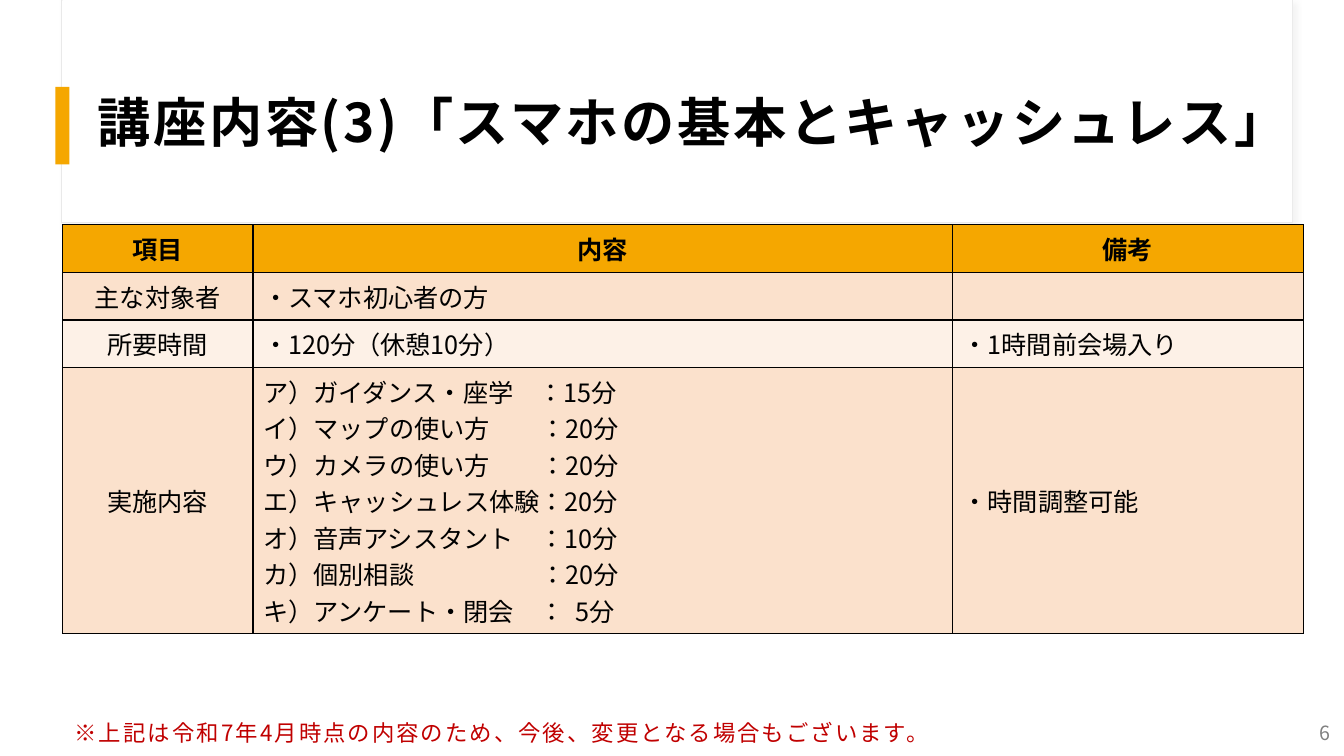
from lxml.etree import SubElement
from pptx import Presentation
from pptx.dml.color import RGBColor
from pptx.enum.shapes import MSO_SHAPE
from pptx.enum.text import MSO_ANCHOR, MSO_AUTO_SIZE, PP_ALIGN
from pptx.oxml.ns import qn
from pptx.util import Pt

HUES = {
    "white": "FFFFFF", "black": "000000", "gold": "F5A700", "peach": "FBE1CC",
    "cream": "FDF1E7", "edge": "E9E9E9", "shade": "D9D9D9", "red": "C00000",
    "grey": "808080",
}
FONT = "Noto Sans CJK JP"
INSET = (8.64, 8.64, 8.64, 7.2)


class Deck:
    def __init__(self, slide):
        self.slide = slide
        self.shapes = slide.shapes

    def hue(self, name):
        return RGBColor.from_string(HUES[name])

    def run(self, para, text, size, color="black", bold=False, gap=0):
        run = para.add_run()
        run.text = text
        font = run.font
        font.size, font.bold, font.name = Pt(size), bold, FONT
        font.color.rgb = self.hue(color)
        props = run._r.get_or_add_rPr()
        props.set("lang", "ja-JP")
        if gap:
            props.set("spc", str(round(gap * 100)))
        SubElement(props, qn("a:ea"), typeface=FONT)

    def rect(self, box, fill, line=None, shade=False):
        shape = self.shapes.add_shape(MSO_SHAPE.RECTANGLE, *map(Pt, box))
        shape.shadow.inherit = False
        shape.fill.solid()
        shape.fill.fore_color.rgb = self.hue(fill)
        if line:
            shape.line.color.rgb = self.hue(line)
            shape.line.width = Pt(0.75)
        else:
            shape.line.fill.background()
        if shade:
            glow = shape._element.spPr.find(qn("a:effectLst"))
            drop = SubElement(glow, qn("a:outerShdw"), blurRad=str(Pt(4)),
                              dist=str(Pt(3)), dir="2700000")
            tint = SubElement(drop, qn("a:srgbClr"), val=HUES["shade"])
            SubElement(tint, qn("a:alpha"), val="30000")

    def frame(self, shape, box, inset, anchor, align):
        shape.left, shape.top, shape.width, shape.height = map(Pt, box)
        frame = shape.text_frame
        frame.word_wrap = True
        frame.auto_size = MSO_AUTO_SIZE.NONE
        frame.vertical_anchor = anchor
        (frame.margin_left, frame.margin_top,
         frame.margin_right, frame.margin_bottom) = map(Pt, inset)
        para = frame.paragraphs[0]
        para.alignment = align
        return para

    def title(self, box, text):
        shape = self.shapes.title
        self.shapes._spTree.append(shape._element)
        para = self.frame(shape, box, INSET, MSO_ANCHOR.MIDDLE, PP_ALIGN.LEFT)
        para.line_spacing = 1.05
        self.run(para, text, 38, bold=True, gap=1.8)

    def body(self, box, text):
        shape = self.slide.placeholders[1]
        self.shapes._spTree.append(shape._element)
        para = self.frame(shape, box, INSET, MSO_ANCHOR.BOTTOM, PP_ALIGN.LEFT)
        para.space_before = Pt(0)
        props = para._p.get_or_add_pPr()
        props.set("marL", "0")
        props.set("indent", "0")
        SubElement(props, qn("a:buNone"))
        self.run(para, text, 16, "red", gap=1.5)

    def label(self, box, text):
        shape = self.shapes.add_textbox(*map(Pt, box))
        para = self.frame(shape, box, (0, 0, 0, 0), MSO_ANCHOR.MIDDLE, PP_ALIGN.RIGHT)
        self.run(para, text, 14, "grey")

    def cell(self, cell, lines, fill, head, mid):
        props = cell._tc.get_or_add_tcPr()
        for side in ("lnL", "lnR", "lnT", "lnB"):
            line = SubElement(props, qn("a:" + side), w=str(Pt(1)))
            solid = SubElement(line, qn("a:solidFill"))
            SubElement(solid, qn("a:srgbClr"), val=HUES["black"])
        cell.fill.solid()
        cell.fill.fore_color.rgb = self.hue(fill)
        cell.vertical_anchor = MSO_ANCHOR.MIDDLE
        frame = cell.text_frame
        for i, text in enumerate(lines):
            para = frame.add_paragraph() if i else frame.paragraphs[0]
            para.alignment = PP_ALIGN.CENTER if mid else PP_ALIGN.LEFT
            self.run(para, text, 18, bold=head)

    def table(self, left, top, wide, high, rows):
        box = (left, top, sum(wide), sum(high))
        table = self.shapes.add_table(len(high), len(wide), *map(Pt, box)).table
        for col, width in zip(table.columns, wide):
            col.width = Pt(width)
        for r, (row, height) in enumerate(zip(rows, high)):
            table.rows[r].height = Pt(height)
            fill = "gold" if r == 0 else "peach" if r % 2 else "cream"
            for c, lines in enumerate(row):
                self.cell(table.cell(r, c), lines, fill, r == 0, r == 0 or c == 0)


ROWS = [
    [["項目"], ["内容"], ["備考"]],
    [["主な対象者"], ["・スマホ初心者の方"], []],
    [["所要時間"], ["・120分（休憩10分）"], ["・1時間前会場入り"]],
    [["実施内容"], [
        "ア）ガイダンス・座学　：15分",
        "イ）マップの使い方　　：20分",
        "ウ）カメラの使い方　　：20分",
        "エ）キャッシュレス体験：20分",
        "オ）音声アシスタント　：10分",
        "カ）個別相談　　　　　：20分",
        "キ）アンケート・閉会　：  5分",
    ], ["・時間調整可能"]],
]


def main():
    show = Presentation()
    show.slide_width, show.slide_height = Pt(960), Pt(540)
    deck = Deck(show.slides.add_slide(show.slide_layouts[1]))
    deck.rect((44, 0, 879, 159), "white", "edge", True)
    deck.rect((44.6, 0, 878.4, 158.4), "white")
    deck.rect((39.6, 62, 10, 55.4), "gold")
    deck.title((61.2, 38.2, 889.2, 92.9), "講座内容(3)「スマホの基本とキャッシュレス」")
    deck.table(44.6, 160.6, (136.1, 499.7, 250.5), (34, 34, 34, 190), ROWS)
    deck.body((44.6, 480.2, 886.3, 59.8),
              "※上記は令和7年4月時点の内容のため、今後、変更となる場合もございます。")
    deck.label((856.8, 513.4, 93.6, 20.2), "6")
    show.save("out.pptx")


if __name__ == "__main__":
    main()
